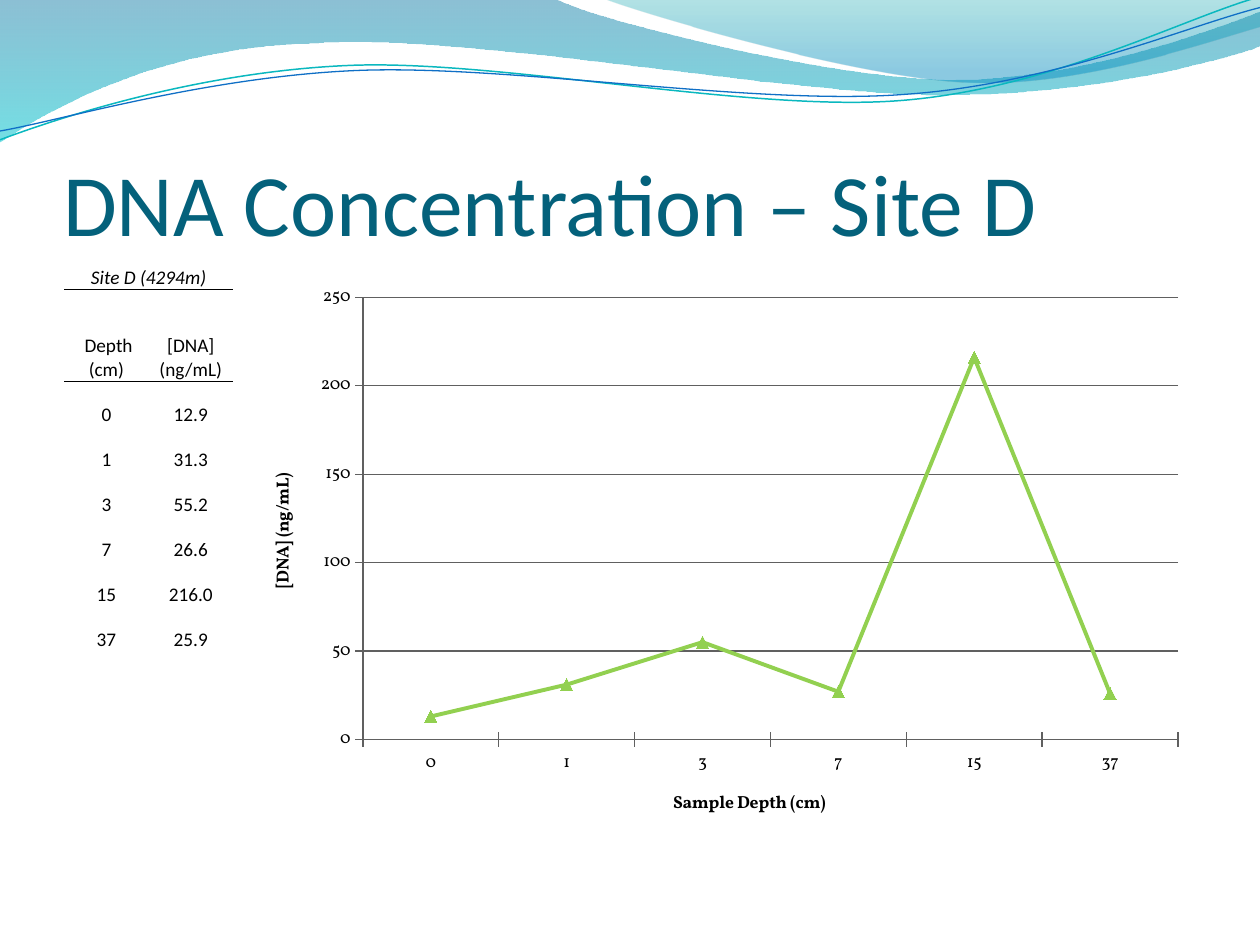
from dataclasses import dataclass

from lxml.etree import SubElement
from pptx import Presentation
from pptx.chart.data import CategoryChartData
from pptx.dml.color import RGBColor
from pptx.enum.chart import XL_CHART_TYPE, XL_MARKER_STYLE, XL_TICK_MARK
from pptx.enum.text import MSO_ANCHOR, PP_ALIGN
from pptx.oxml import parse_xml
from pptx.oxml.ns import nsdecls, qn
from pptx.util import Inches, Pt


@dataclass(frozen=True)
class Theme:
    ink: str = "000000"
    head: str = "04617B"
    mark: str = "92D050"
    grid: str = "606060"
    teal: str = "0AB8BF"
    blue: str = "0F6FC6"
    sans: str = "Calibri"
    serif: str = "Vollkorn"
    big: float = 50
    cell: float = 11
    tick: float = 10


PLAIN = "{2D5ABB26-0587-4C30-8999-92F81FD0307C}"
DEPTHS = [0, 1, 3, 7, 15, 37]
LEVELS = [12.9, 31.3, 55.2, 26.6, 216.0, 25.9]

# A wave is a start point, then lines (x, y) and curves (three points).
BAND = [(0, 0), (4.4, -0.01), (4.76, 0.17, 6.64, 0.63, 7.58, 0.63),
        (8.53, 0.63, 9.58, 0.26, 10, 0.09), (10.01, 0.36),
        (9.83, 0.44, 8.7, 0.76, 7.46, 0.75),
        (6.22, 0.75, 3.82, 0.28, 2.57, 0.34),
        (1.29, 0.36, 0.46, 0.83, -0.01, 1.13), (0, 0)]
CREST = [(4.79, -0.01), (5.09, 0.11, 6.82, 0.62, 7.69, 0.65),
         (8.56, 0.69, 9.61, 0.32, 10, 0.21), (10, 0), (4.79, -0.01)]
UPPER = [(0, 1.11), (0.48, 0.93, 1.58, 0.57, 2.77, 0.52),
         (3.95, 0.47, 5.93, 0.89, 7.13, 0.8),
         (8.33, 0.71, 9.38, 0.15, 9.98, -0.02)]
LOWER = [(0, 1.04), (0.47, 0.96, 1.64, 0.61, 2.83, 0.56),
         (4.03, 0.51, 5.97, 0.84, 7.17, 0.75),
         (8.36, 0.67, 9.41, 0.21, 10, 0.06)]


def apply(item, **values):
    for name, value in values.items():
        setattr(item, name, value)


def color(code):
    return RGBColor.from_string(code)


class Deck:
    def __init__(self, theme):
        self.theme = theme
        self.file = Presentation()
        apply(self.file, slide_width=Inches(10), slide_height=Inches(7.5))
        self.slide = self.file.slides.add_slide(self.file.slide_layouts[5])
        self.shapes = self.slide.shapes

    def font(self, font, size, name, code, **more):
        apply(font, size=Pt(size), name=name, **more)
        font.color.rgb = color(code)

    def outline(self, parts, close):
        """Lay all points as lines, then join each curve's three into one."""
        start, *rest = [[Inches(n) for n in part] for part in parts]
        pen = self.shapes.build_freeform(*start)
        for part in rest:
            pen.add_line_segments(list(zip(part[::2], part[1::2])),
                                  close=close and part is rest[-1])
        shape = pen.convert_to_shape()
        shape.shadow.inherit = False
        lines = iter(list(shape._element.iter(qn("a:lnTo"))))
        for part in rest:
            first = next(lines)
            if len(part) == 6:
                first.tag = qn("a:cubicBezTo")
                for _ in range(2):
                    line = next(lines)
                    first.append(line[0])
                    line.getparent().remove(line)
        return shape

    def wave(self, parts, stops):
        """Fill a wave downward; a stop is place, colour and opacity."""
        shape = self.outline(parts, True)
        shape.line.fill.background()
        shape.fill.gradient()
        shape.fill.gradient_angle = 270
        for stop, (place, code, _) in zip(shape.fill.gradient_stops, stops):
            stop.position = place
            stop.color.rgb = color(code)
        tints = shape._element.spPr.iter(qn("a:srgbClr"))
        for tint, (_, _, share) in zip(tints, stops):
            SubElement(tint, qn("a:alpha"), val=str(share * 1000))

    def curve(self, parts, code, width):
        shape = self.outline(parts, False)
        shape.fill.background()
        shape.line.color.rgb = color(code)
        shape.line.width = Pt(width)

    def title(self, text, left, top, width, height):
        box = self.shapes.title
        apply(box, left=Inches(left), top=Inches(top),
              width=Inches(width), height=Inches(height))
        frame = box.text_frame
        frame.text = text
        apply(frame, vertical_anchor=MSO_ANCHOR.BOTTOM, word_wrap=True,
              margin_left=0, margin_right=0, margin_bottom=0,
              margin_top=Inches(0.05))
        line = frame.paragraphs[0]
        line.alignment = PP_ALIGN.LEFT
        style = self.theme
        self.font(line.runs[0].font, style.big, style.sans, style.head)
        self.shapes._spTree.append(box._element)

    def axis(self, axis, text):
        style = self.theme
        axis.major_tick_mark = XL_TICK_MARK.CROSS
        axis.format.line.color.rgb = color(style.grid)
        frame = axis.axis_title.text_frame
        frame.text = text
        self.font(frame.paragraphs[0].runs[0].font, style.tick, style.serif,
                  style.ink, bold=True)

    def chart(self, names, values, labels, area, plot):
        """Draw a line chart; plot is the inner area in inches."""
        style = self.theme
        data = CategoryChartData()
        data.categories = [str(name) for name in names]
        data.add_series("Series 1", values)
        chart = self.shapes.add_chart(XL_CHART_TYPE.LINE_MARKERS,
                                      *map(Inches, area), data).chart
        apply(chart, has_legend=False, has_title=False)
        self.font(chart.font, style.tick, style.serif, style.ink)
        self.axis(chart.category_axis, labels[0])
        rise = chart.value_axis
        self.axis(rise, labels[1])
        apply(rise, minimum_scale=0, maximum_scale=250, major_unit=50)
        rise.major_gridlines.format.line.color.rgb = color(style.grid)
        chart.plots[0].vary_by_categories = False

        line = chart.plots[0].series[0]
        line.smooth = False
        line.format.line.color.rgb = color(style.mark)
        apply(line.marker, style=XL_MARKER_STYLE.TRIANGLE, size=7)
        line.marker.format.fill.solid()
        line.marker.format.fill.fore_color.rgb = color(style.mark)
        line.marker.format.line.color.rgb = color(style.mark)

        inner = chart._chartSpace.chart.plotArea
        for old in inner.findall(qn("c:layout")):
            inner.remove(old)
        layout = parse_xml(f"<c:layout {nsdecls('c')}/>")
        manual = SubElement(layout, qn("c:manualLayout"))
        shares = [part / area[2 + i % 2] for i, part in enumerate(plot)]
        items = dict(layoutTarget="inner", xMode="edge", yMode="edge",
                     **dict(zip("xywh", shares)))
        for name, value in items.items():
            SubElement(manual, qn(f"c:{name}"), val=str(value))
        inner.insert(0, layout)

    def border(self, cell, top, bottom):
        """Rule a cell above and below; a width of 0 leaves a side bare."""
        sides = dict(lnL=0, lnR=0, lnT=top, lnB=bottom)
        ink = f'<a:solidFill><a:srgbClr val="{self.theme.ink}"/></a:solidFill>'
        for i, (side, width) in enumerate(sides.items()):
            fill = ink if width else "<a:noFill/>"
            size = f'w="{Pt(width)}"' if width else ""
            cell._tc.get_or_add_tcPr().insert(i, parse_xml(
                f'<a:{side} {nsdecls("a")} {size}>{fill}</a:{side}>'))

    def table(self, rows, heights, rules, area):
        """Add a table; rules gives the line width under each row."""
        style = self.theme
        table = self.shapes.add_table(len(rows), len(rows[0]),
                                      *map(Inches, area)).table
        apply(table, first_row=False, horz_banding=False)
        table._tbl.tblPr.find(qn("a:tableStyleId")).text = PLAIN
        for row, height in zip(table.rows, heights):
            row.height = Inches(height)
        table.cell(0, 0).merge(table.cell(0, 1))
        for r, row in enumerate(rows):
            for c, text in enumerate(row):
                cell = table.cell(r, c)
                apply(cell, text=text, vertical_anchor=MSO_ANCHOR.BOTTOM,
                      margin_left=0, margin_right=0, margin_top=0,
                      margin_bottom=0)
                cell.fill.background()
                line = cell.text_frame.paragraphs[0]
                line.alignment = PP_ALIGN.CENTER
                for run in line.runs:
                    self.font(run.font, style.cell, style.sans, style.ink,
                              italic=r == 0)
                self.border(cell, rules.get(r - 1, 0), rules.get(r, 0))


def main():
    theme = Theme()
    deck = Deck(theme)
    deck.wave(BAND, [(0, "0074A1", 45), (1, "00C6CF", 55)])
    deck.wave(CREST, [(0, "00A1A9", 30), (0.8, "008BBF", 45)])
    deck.curve(UPPER, theme.teal, 0.85)
    deck.curve(LOWER, theme.blue, 0.75)
    deck.title("DNA Concentration – Site D", 0.5, 0.77, 9, 1.25)
    deck.chart(DEPTHS, [round(level) for level in LEVELS],
               ("Sample Depth (cm)", "[DNA] (ng/mL)"),
               (1.93, 2.18, 7.57, 4.52), (0.95, 0.18, 6.47, 3.51))
    rows = [("Site D (4294m)", ""), (" Depth (cm)", "[DNA] (ng/mL)")]
    rows += [(str(d), f"{v:.1f}") for d, v in zip(DEPTHS, LEVELS)]
    tall, full = 0.73, 3.23
    heights = [(full - tall) / (len(rows) - 1)] * len(rows)
    heights[1] = tall
    deck.table(rows, heights, {0: 0.5, 1: 1}, (0.51, 1.94, 1.34, full))
    deck.file.save("out.pptx")


if __name__ == "__main__":
    main()
